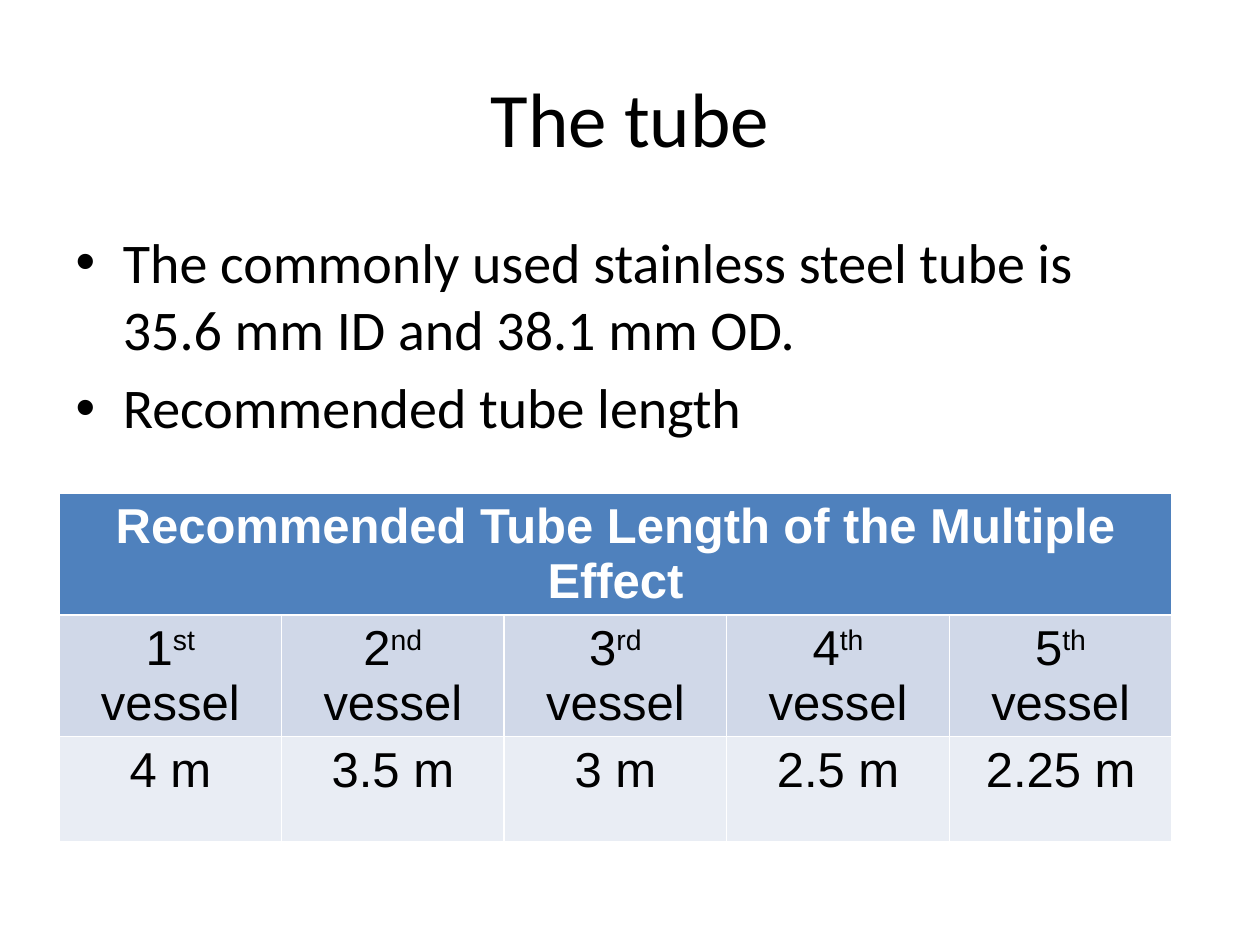
"""Build a slide on tube sizes with a table of recommended lengths."""
from dataclasses import dataclass

from pptx import Presentation
from pptx import util as u
from pptx.dml.color import RGBColor
from pptx.enum import text

BLACK = RGBColor(0x00, 0x00, 0x00)
WHITE = RGBColor(0xFF, 0xFF, 0xFF)
BLUE = RGBColor(0x4F, 0x81, 0xBD)
BAND = RGBColor(0xD0, 0xD8, 0xE8)
PALE = RGBColor(0xE9, 0xED, 0xF4)
MID = text.PP_ALIGN.CENTER


@dataclass(frozen=True)
class Style:
    font: str
    size: int
    color: RGBColor = BLACK
    bold: bool = False


@dataclass(frozen=True)
class Vessel:
    rank: str
    mark: str
    length: str


HEAD = Style("Calibri", 44)
BODY = Style("Calibri", 32)
CELL = Style("Arial", 28)
TOP = Style("Arial", 28, WHITE, True)

POINTS = (
    "The commonly used stainless steel tube is 35.6 mm ID and 38.1 mm OD.",
    "Recommended tube length",
)
VESSELS = (
    Vessel("1", "st", "4 m"),
    Vessel("2", "nd", "3.5 m"),
    Vessel("3", "rd", "3 m"),
    Vessel("4", "th", "2.5 m"),
    Vessel("5", "th", "2.25 m"),
)


def px(n: int) -> int:
    """Turn pixels into EMU."""
    return u.Emu(round(n * 914400 / 126))


def place(shape, left: int, top: int, width: int, height: int) -> None:
    """Move and size a shape in pixels."""
    shape.left, shape.top = px(left), px(top)
    shape.width, shape.height = px(width), px(height)


def add_run(para, words: str, style: Style, base: int = 0) -> None:
    """Add one styled run, raised by base percent."""
    run = para.add_run()
    run.text = words
    font = run.font
    font.name, font.size, font.bold = style.font, u.Pt(style.size), style.bold
    font.color.rgb = style.color
    if base:
        run.font._element.set("baseline", str(base * 1000))


def fill_cell(cell, fill: RGBColor, style: Style, *parts: tuple[str, int]) -> None:
    """Fill a cell and write its centred runs."""
    cell.fill.solid()
    cell.fill.fore_color.rgb = fill
    para = cell.text_frame.paragraphs[0]
    para.alignment = MID
    for words, base in parts:
        add_run(para, words, style, base)


def add_grid(slide) -> None:
    """Add the table of tube lengths."""
    count = len(VESSELS)
    grid = slide.shapes.add_table(
        3, count, px(59), px(493), px(1113), px(315)).table
    for col in grid.columns:
        col.width = px(1113) // count
    grid.cell(0, 0).merge(grid.cell(0, count - 1))
    fill_cell(grid.cell(0, 0), BLUE, TOP,
              ("Recommended Tube Length of the Multiple Effect", 0))
    for i, item in enumerate(VESSELS):
        fill_cell(grid.cell(1, i), BAND, CELL,
                  (item.rank, 0), (item.mark, 30), (" vessel", 0))
        fill_cell(grid.cell(2, i), PALE, CELL, (item.length, 0))


def main() -> None:
    """Build and save the slide."""
    deck = Presentation()
    deck.slide_width, deck.slide_height = px(1260), px(945)
    slide = deck.slides.add_slide(deck.slide_layouts[1])

    title = slide.shapes.title
    place(title, 63, 38, 1134, 158)
    title.text_frame.vertical_anchor = text.MSO_ANCHOR.MIDDLE
    para = title.text_frame.paragraphs[0]
    para.alignment = MID
    add_run(para, "The tube", HEAD)

    body = slide.placeholders[1]
    place(body, 63, 221, 1134, 624)
    frame = body.text_frame
    for i, point in enumerate(POINTS):
        para = frame.add_paragraph() if i else frame.paragraphs[0]
        add_run(para, point, BODY)

    add_grid(slide)
    deck.save("out.pptx")


if __name__ == "__main__":
    main()
